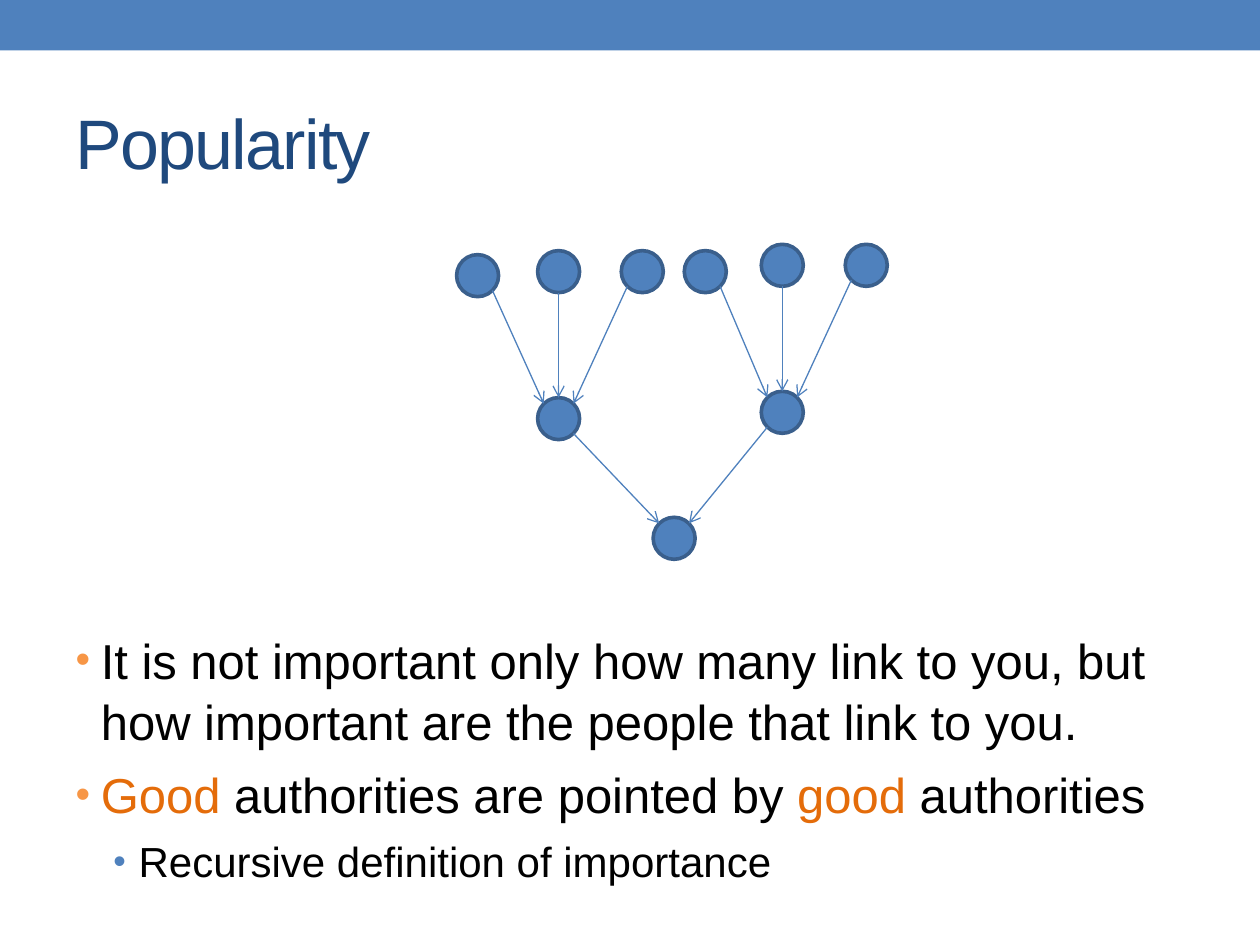
import pptx
import pptx.util
import pptx.dml.color
import pptx.enum.shapes
import pptx.enum.text
import pptx.oxml
import pptx.oxml.ns

Pt = pptx.util.Pt
RGB = pptx.dml.color.RGBColor
SHAPE = pptx.enum.shapes.MSO_SHAPE
LINE = pptx.enum.shapes.MSO_CONNECTOR
ANCHOR = pptx.enum.text.MSO_ANCHOR
ALIGN = pptx.enum.text.PP_ALIGN
FIT = pptx.enum.text.MSO_AUTO_SIZE

BLUE = RGB(0x4F, 0x81, 0xBD)
EDGE = RGB(0x3A, 0x5F, 0x8C)
NAVY = RGB(0x1F, 0x49, 0x7D)
BLACK = RGB(0, 0, 0)
ORANGE = RGB(0xE4, 0x6C, 0x0A)
AMBER = RGB(0xF7, 0x96, 0x46)

FONT = "Arial"
SIZE = 24  # node diameter

# Node centres relative to the graph box: (sources, hub) for each side
SIDES = [
    ([(12.9, 18.5), (59.2, 16.2), (107, 16.2)], (59.2, 100.2)),
    ([(143, 16.2), (187, 12.6), (235, 12.6)], (187, 96.6)),
]
ROOT = (125.2, 168.6)

# Each point: level, size, space before, bullet colour, runs
POINTS = [
    (0, 28, 6.4, AMBER, [
        ("It is not important only how many link to you, "
         "but how important are the people that link to you.", BLACK)]),
    (0, 28, 6.4, AMBER, [
        ("Good ", ORANGE), ("authorities are pointed by ", BLACK),
        ("good ", ORANGE), ("authorities", BLACK)]),
    (1, 24, 5.5, BLUE, [("Recursive definition of importance", BLACK)]),
]


def add_xml(parent, tag, **attrs):
    item = pptx.oxml.parse_xml(f"<{tag} {pptx.oxml.ns.nsdecls('a')}/>")
    for key, value in attrs.items():
        item.set(key, str(value))
    parent.append(item)
    return item


def place(shape, box):
    shape.left, shape.top, shape.width, shape.height = map(Pt, box)


def add_run(para, text, size, color):
    run = para.add_run()
    run.text = text
    run.font.name = FONT
    run.font.size = Pt(size)
    run.font.color.rgb = color
    return run


def add_band(slide, box):
    band = slide.shapes.add_shape(SHAPE.RECTANGLE, *map(Pt, box))
    band.shadow.inherit = False
    band.fill.solid()
    band.fill.fore_color.rgb = BLUE
    band.line.fill.background()


def add_title(slide, box):
    title = slide.shapes.title
    place(title, box)
    frame = title.text_frame
    frame.auto_size = FIT.NONE
    frame.vertical_anchor = ANCHOR.MIDDLE
    para = frame.paragraphs[0]
    para.alignment = ALIGN.LEFT
    run = add_run(para, "Popularity", 40, NAVY)
    run.font._element.set("spc", "-100")


def add_bullet(para, level, color):
    props = para._p.get_or_add_pPr()
    props.set("marL", str(Pt(14.4 + 21.6 * level)))
    props.set("indent", str(-Pt(14.4)))
    tint = add_xml(props, "a:buClr")
    add_xml(tint, "a:srgbClr", val=color)
    add_xml(props, "a:buSzPct", val=85000)
    add_xml(props, "a:buFont", typeface=FONT)
    add_xml(props, "a:buChar", char="•")


def add_body(slide, box):
    body = slide.placeholders[1]
    place(body, box)
    frame = body.text_frame
    frame.auto_size = FIT.NONE
    frame.vertical_anchor = ANCHOR.BOTTOM
    for i, (level, size, gap, color, runs) in enumerate(POINTS):
        para = frame.add_paragraph() if i else frame.paragraphs[0]
        para.level = level
        para.space_before = Pt(gap)
        para.line_spacing = 1.05
        add_bullet(para, level, color)
        for text, ink in runs:
            add_run(para, text, size, ink)


def add_node(group, x, y):
    node = group.shapes.add_shape(
        SHAPE.OVAL, Pt(x - SIZE / 2), Pt(y - SIZE / 2), Pt(SIZE), Pt(SIZE))
    node.shadow.inherit = False
    node.fill.solid()
    node.fill.fore_color.rgb = BLUE
    node.line.color.rgb = EDGE
    node.line.width = Pt(2.08)


def add_arrow(group, start, end):
    # Straight down from rim to rim, or from one 45 degree point to the other
    (x1, y1), (x2, y2) = start, end
    if x1 == x2:
        dx, dy = 0, SIZE / 2
    else:
        dy = SIZE / 2 * 0.71
        dx = dy if x2 > x1 else -dy
    ends = (x1 + dx, y1 + dy, x2 - dx, y2 - dy)
    arrow = group.shapes.add_connector(LINE.STRAIGHT, *map(Pt, ends))
    arrow.line.color.rgb = BLUE
    arrow.line.width = Pt(0.75)
    add_xml(arrow.line._get_or_add_ln(), "a:tailEnd", type="arrow")
    add_xml(arrow._element.spPr, "a:effectLst")


def add_graph(slide, left, top):
    def shift(point):
        return left + point[0], top + point[1]

    group = slide.shapes.add_group_shape()
    root = shift(ROOT)
    add_node(group, *root)
    for sources, hub in SIDES:
        hub = shift(hub)
        add_node(group, *hub)
        for source in map(shift, sources):
            add_node(group, *source)
            add_arrow(group, source, hub)
        add_arrow(group, hub, root)


def main():
    deck = pptx.Presentation()
    deck.slide_width, deck.slide_height = Pt(720), Pt(540)
    slide = deck.slides.add_slide(deck.slide_layouts[1])
    add_band(slide, (0, 0, 720, 28.8))
    add_title(slide, (36, 42, 648, 78))
    add_body(slide, (36, 126, 648, 384))
    add_graph(slide, 260, 139)
    deck.save("out.pptx")


if __name__ == "__main__":
    main()
